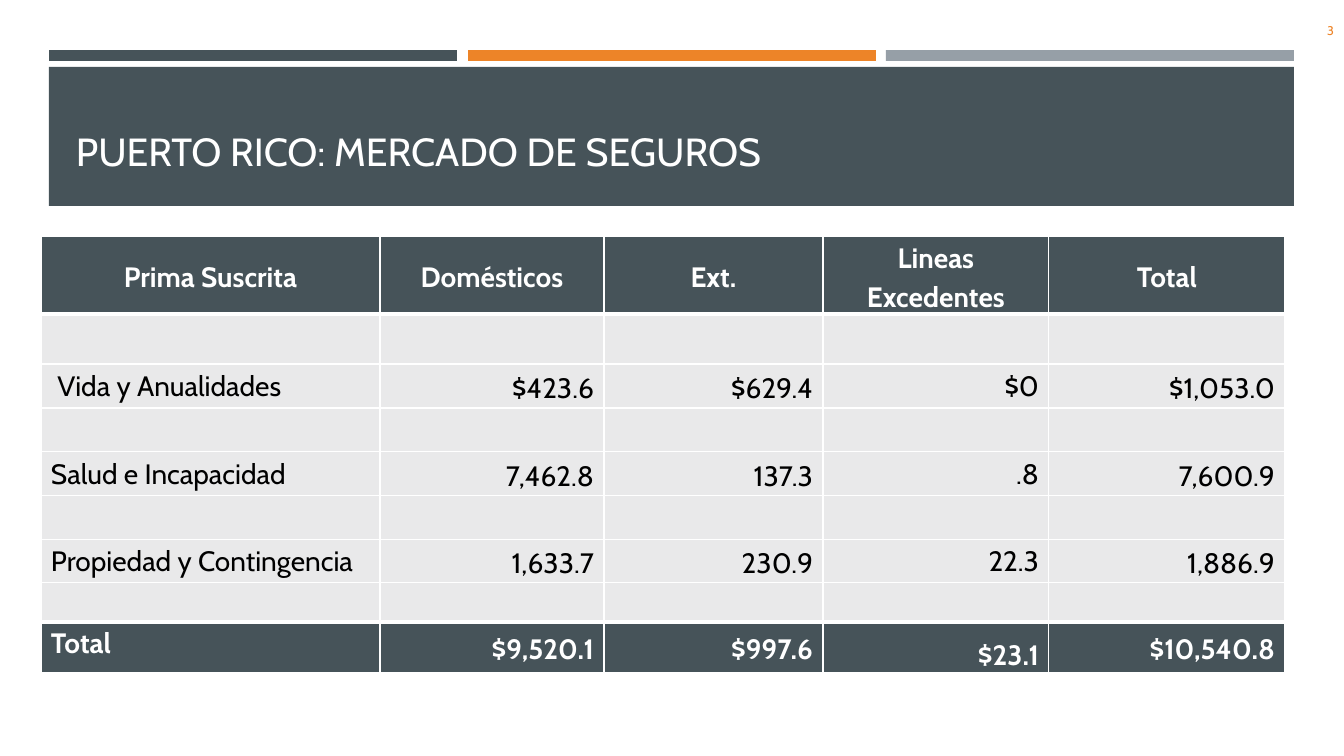
from pptx import Presentation
from pptx import util as u
from pptx.dml.color import RGBColor
from pptx.enum import shapes, text
from pptx.oxml import parse_xml
from pptx.oxml.ns import nsdecls

PX = 914400 / 100.8
SLATE = RGBColor(0x46, 0x53, 0x59)
ORANGE = RGBColor(0xED, 0x84, 0x28)
GRAY = RGBColor(0x96, 0x9F, 0xA7)
PALE = RGBColor(0xE9, 0xE9, 0xEA)
WHITE = RGBColor(0xFF, 0xFF, 0xFF)
BLACK = RGBColor(0, 0, 0)
LEFT, RIGHT, CENTER = text.PP_ALIGN.LEFT, text.PP_ALIGN.RIGHT, text.PP_ALIGN.CENTER
TOP, MIDDLE, BOTTOM = text.MSO_ANCHOR.TOP, text.MSO_ANCHOR.MIDDLE, text.MSO_ANCHOR.BOTTOM


def px(*nums):
    return [u.Emu(round(n * PX)) for n in nums]


def write(par, words, size, color, align=LEFT, bold=False):
    par.alignment = align
    run = par.add_run()
    run.text = words
    run.font.name = "Cabin"
    run.font.size = u.Pt(size)
    run.font.bold = bold
    run.font.color.rgb = color


deck = Presentation()
deck.slide_width, deck.slide_height = px(1344, 756)
slide = deck.slides.add_slide(deck.slide_layouts[6])

# Three strips and the title band
bars = [(49, 50, 408, 11, SLATE), (468, 50, 408, 11, ORANGE),
        (886, 50, 408, 11, GRAY), (49, 67, 1245, 139, SLATE)]
for *box, color in bars:
    bar = slide.shapes.add_shape(shapes.MSO_SHAPE.RECTANGLE, *px(*box))
    bar.shadow.inherit = False
    bar.fill.solid()
    bar.fill.fore_color.rgb = color
    bar.line.fill.background()

# Title and page number
labels = [((66, 70, 1216, 109), "PUERTO RICO: MERCADO DE SEGUROS", 28, WHITE, LEFT, BOTTOM),
          ((1228, 10, 116, 40), "3", 9, ORANGE, RIGHT, MIDDLE)]
for box, words, size, color, align, anchor in labels:
    frame = slide.shapes.add_textbox(*px(*box)).text_frame
    frame.word_wrap = True
    frame.vertical_anchor = anchor
    write(frame.paragraphs[0], words, size, color, align)

# Premium table
blank = [""] * 5
rows = [
    ["Prima Suscrita", "Domésticos", "Ext.", "Lineas Excedentes", "Total"],
    blank,
    [" Vida y Anualidades", "$423.6", "$629.4", "$0", "$1,053.0"],
    blank,
    ["Salud e Incapacidad", "7,462.8", "137.3", ".8", "7,600.9"],
    blank,
    ["Propiedad y Contingencia", "1,633.7", "230.9", "22.3", "1,886.9"],
    blank,
    ["Total", "$9,520.1", "$997.6", "$23.1", "$10,540.8"],
]
widths = [339, 224, 219, 226, 236]
heights = [78, 50, 44, 44, 44, 44, 43, 39, 51]
last = len(rows) - 1
grid = slide.shapes.add_table(len(rows), len(widths),
                              *px(41, 236, sum(widths), sum(heights))).table
for col, wide in zip(grid.columns, px(*widths)):
    col.width = wide
for row, high in zip(grid.rows, px(*heights)):
    row.height = high

for r, row in enumerate(rows):
    dark = r in (0, last)
    for c, words in enumerate(row):
        cell = grid.cell(r, c)
        cell.margin_left, cell.margin_right = px(10, 10)
        cell.margin_top = cell.margin_bottom = 0
        cell.fill.solid()
        cell.fill.fore_color.rgb = SLATE if dark else PALE
        cell.vertical_anchor = MIDDLE if r == 0 or c in (1, 2, 4) else TOP

        # White rules, thick below the head and above the total
        thick = {"T": r in (1, last), "B": r in (0, last - 1)}
        props = cell._tc.get_or_add_tcPr()
        for i, side in enumerate("LRTB"):
            wide = u.Pt(3 if thick.get(side) else 1)
            props.insert(i, parse_xml(
                f'<a:ln{side} {nsdecls("a")} w="{wide}"><a:solidFill>'
                f'<a:srgbClr val="{WHITE}"/></a:solidFill></a:ln{side}>'))

        if words:
            par = cell.text_frame.paragraphs[0]
            par.line_spacing = 1.5 if (r, c) == (last, 3) else 1.15
            align = CENTER if r == 0 else RIGHT if c else LEFT
            write(par, words, 20, WHITE if dark else BLACK, align, dark)

deck.save("out.pptx")
